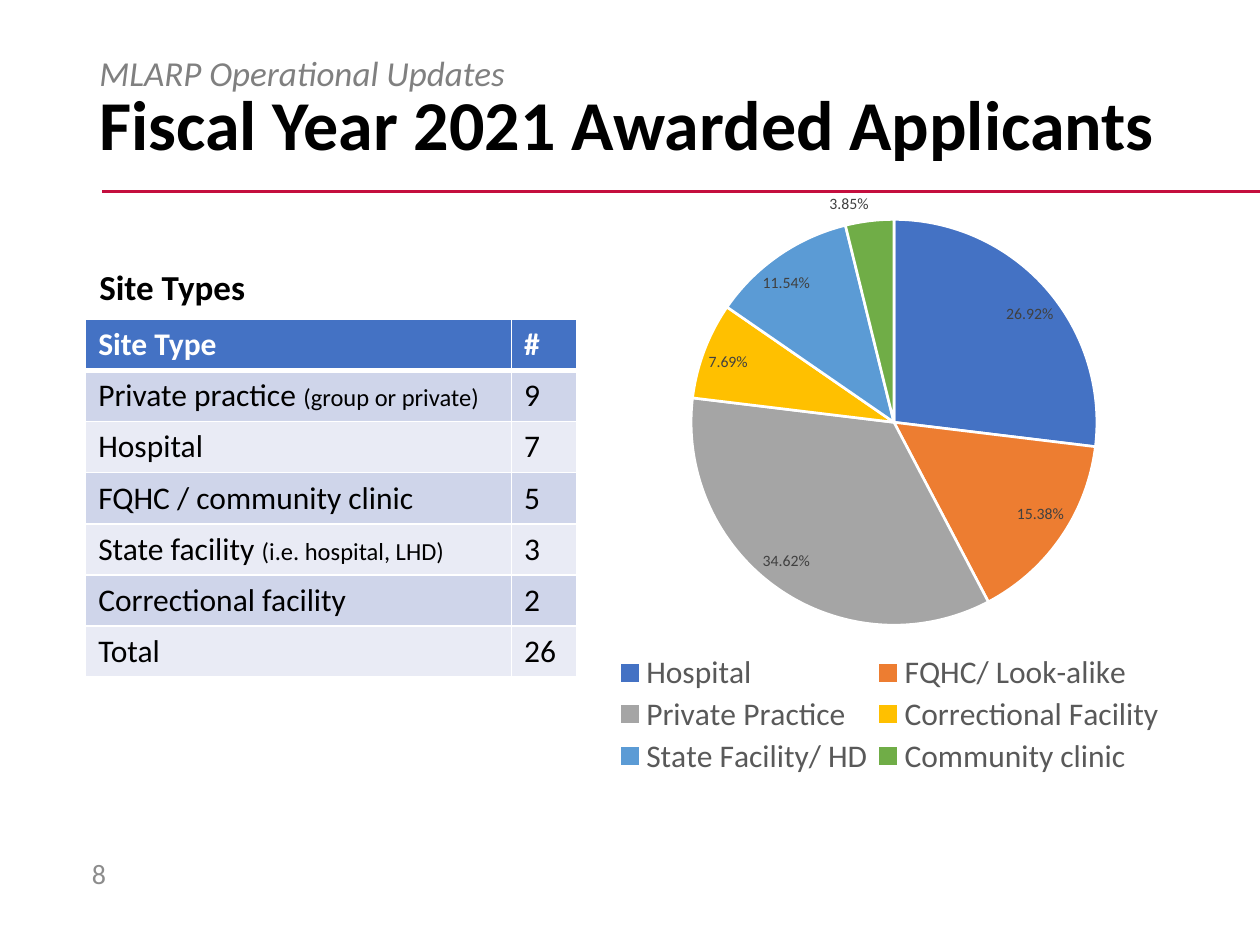
from lxml.etree import SubElement
from pptx import Presentation
from pptx.chart.data import CategoryChartData
from pptx.dml.color import RGBColor
from pptx.enum.chart import XL_CHART_TYPE, XL_LABEL_POSITION, XL_LEGEND_POSITION
from pptx.enum.shapes import MSO_CONNECTOR
from pptx.enum.text import MSO_ANCHOR
from pptx.oxml import parse_xml
from pptx.oxml.ns import nsdecls, qn
from pptx.util import Inches, Pt

FONT = "Calibri"
TEXTS = [
    ("Fiscal Year 2021 Awarded Applicants", (6.9, 3.87, 86.2, 19.33),
     dict(size=40, bold=True), MSO_ANCHOR.MIDDLE, 0.9),
    ("8", (6.3, 89.73, 5.5, 5.33),
     dict(size=16, color="8C8C8C"), MSO_ANCHOR.MIDDLE, 1),
    ("MLARP Operational Updates", (6.9, 5.33, 86.2, 6.53),
     dict(size=20, color="808080", italic=True), MSO_ANCHOR.TOP, 0.9),
    ("Site Types", (6.9, 27.47, 34.3, 5.87),
     dict(size=20, bold=True), MSO_ANCHOR.TOP, 1),
]
SITES = [
    ("Site Type", "", "#"),
    ("Private practice ", "(group or private)", "9"),
    ("Hospital", "", "7"),
    ("FQHC / community clinic", "", "5"),
    ("State facility ", "(i.e. hospital, LHD)", "3"),
    ("Correctional facility", "", "2"),
    ("Total", "", "26"),
]
SLICES = [
    ("Hospital", 0.2692, "4472C4"),
    ("FQHC/ Look-alike", 0.1538, "ED7D31"),
    ("Private Practice", 0.3462, "A5A5A5"),
    ("Correctional Facility", 0.0769, "FFC000"),
    ("State Facility/ HD", 0.1154, "5B9BD5"),
    ("Community clinic", 0.0385, "70AD47"),
]
HEADER, BANDS = "4472C4", ("CFD5EA", "E9EBF5")
PLOT_AREA = (0.28, 0.07, 0.45, 0.66)
LEGEND_AREA = (0.19, 0.77, 0.62, 0.21)

prs = Presentation()
prs.slide_width, prs.slide_height = Inches(10), Inches(7.5)
s = prs.slides.add_slide(prs.slide_layouts[6])


def rgb(color):
    return RGBColor.from_string(color)


def box(x, y, w, h):
    W, H = prs.slide_width, prs.slide_height
    return [int(v * full / 100) for v, full in ((x, W), (y, H), (w, W), (h, H))]


def style(font, size, color="000000", bold=False, italic=False):
    font.name, font.size = FONT, Pt(size)
    font.bold, font.italic = bold, italic
    font.color.rgb = rgb(color)


def add_run(p, text, **look):
    r = p.add_run()
    r.text = text
    style(r.font, **look)


def border(cell, bottom):
    tcPr = cell._tc.get_or_add_tcPr()
    for i, (side, width) in enumerate((("L", 1), ("R", 1), ("T", 1), ("B", bottom))):
        ln = parse_xml(f'<a:ln{side} {nsdecls("a")} w="{Pt(width)}"><a:solidFill>'
                       f'<a:srgbClr val="FFFFFF"/></a:solidFill></a:ln{side}>')
        tcPr.insert(i, ln)


def place(element, area, inner=False):
    layout = element.find(qn("c:layout"))
    if layout is None:
        layout = parse_xml(f'<c:layout {nsdecls("c")}/>')
        before = element.find(qn("c:legendPos"))
        element.insert(0 if before is None else 1, layout)
    manual = SubElement(layout, qn("c:manualLayout"))
    if inner:
        SubElement(manual, qn("c:layoutTarget")).set("val", "inner")
    for tag in ("xMode", "yMode"):
        SubElement(manual, qn(f"c:{tag}")).set("val", "edge")
    for tag, share in zip("xywh", area):
        SubElement(manual, qn(f"c:{tag}")).set("val", str(share))


x, y, w, _ = box(8.1, 20.27, 91.9, 0)
rule = s.shapes.add_connector(MSO_CONNECTOR.STRAIGHT, x, y, x + w, y)
rule.line.color.rgb = rgb("C40E3E")
rule.line.width = Pt(2.25)
SubElement(rule._element.spPr, qn("a:effectLst"))

for text, area, look, anchor, spacing in TEXTS:
    tf = s.shapes.add_textbox(*box(*area)).text_frame
    tf.word_wrap, tf.vertical_anchor = True, anchor
    p = tf.paragraphs[0]
    p.line_spacing = spacing
    add_run(p, text, **look)

table = s.shapes.add_table(len(SITES), 2, *box(6.8, 33.8, 39, 37.87)).table
for column, share in zip(table.columns, (33.8, 5.2)):
    column.width = box(0, 0, share, 0)[2]
for i, (site, detail, count) in enumerate(SITES):
    look = dict(size=18, color="000000" if i else "FFFFFF", bold=i == 0)
    for cell, text in zip(table.rows[i].cells, (site, count)):
        cell.fill.solid()
        cell.fill.fore_color.rgb = rgb(BANDS[(i - 1) % 2] if i else HEADER)
        border(cell, 1 if i else 3)
        add_run(cell.text_frame.paragraphs[0], text, **look)
    if detail:
        add_run(table.cell(i, 0).text_frame.paragraphs[0], detail, size=14)

data = CategoryChartData(number_format="0.00%")
data.categories = [name for name, _, _ in SLICES]
data.add_series("Series 1", [value for _, value, _ in SLICES])
chart = s.shapes.add_chart(XL_CHART_TYPE.PIE, *box(34.7, 18.67, 71.8, 65.07), data).chart
style(chart.font, 10)
chart.has_title = False
chart.has_legend = True
chart.legend.position = XL_LEGEND_POSITION.BOTTOM
chart.legend.include_in_layout = False
style(chart.legend.font, 18, "595959")
place(chart.legend._element, LEGEND_AREA)
place(chart._chartSpace.chart.plotArea, PLOT_AREA, inner=True)

plot = chart.plots[0]
plot.vary_by_categories = True
plot.has_data_labels = True
labels = plot.data_labels
labels.show_value, labels.show_percentage = True, False
labels.number_format, labels.number_format_is_linked = "0.00%", False
labels.position = XL_LABEL_POSITION.BEST_FIT
style(labels.font, 9, "404040")
for i, (_, _, color) in enumerate(SLICES):
    fmt = plot.series[0].points[i].format
    fmt.fill.solid()
    fmt.fill.fore_color.rgb = rgb(color)
    fmt.line.color.rgb = rgb("FFFFFF")
    fmt.line.width = Pt(1.5)

prs.save("out.pptx")
